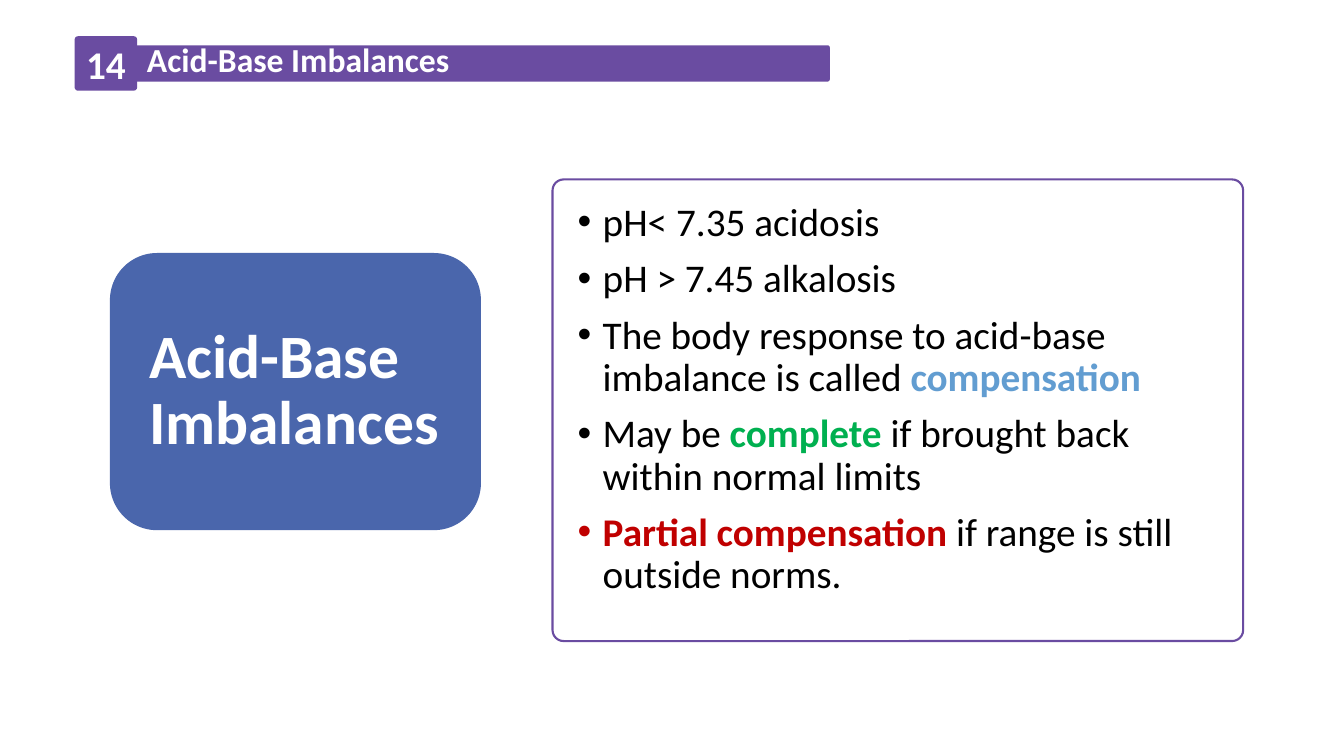
"""Builds a slide on acid-base imbalances."""
from lxml import etree
from pptx import Presentation
from pptx.dml.color import RGBColor
from pptx.enum.shapes import MSO_SHAPE
from pptx.enum.text import MSO_ANCHOR, PP_ALIGN
from pptx.oxml.ns import qn
from pptx.util import Inches, Pt

ROUNDED = MSO_SHAPE.ROUNDED_RECTANGLE
TOP, MIDDLE = MSO_ANCHOR.TOP, MSO_ANCHOR.MIDDLE
LEFT, CENTER = PP_ALIGN.LEFT, PP_ALIGN.CENTER

PURPLE, BLUE, WHITE, BLACK = "6A4CA1", "4A66AC", "FFFFFF", "000000"
SKY, GREEN, RED = "629DD1", "00B050", "C00000"
TOPIC = "Acid-Base Imbalances"
POINTS = [
    [("pH< 7.35 acidosis", None)],
    [("pH > 7.45 alkalosis", None)],
    [("The body response to acid-base imbalance is called ", None), ("compensation", SKY)],
    [("May be ", None), ("complete ", GREEN), ("if brought back within normal limits", None)],
    [("Partial compensation ", RED), ("if range is still outside norms.", None)],
]


def color(value):
    return RGBColor.from_string(value)


class SlideBuilder:
    def __init__(self, page, font="Calibri"):
        self.page = page
        self.font = font

    def panel(self, left, top, width, height, fill, line=None, corner=0.06):
        shape = self.page.shapes.add_shape(
            ROUNDED, Inches(left), Inches(top), Inches(width), Inches(height))
        shape.shadow.inherit = False
        shape.adjustments[0] = corner
        shape.fill.solid()
        shape.fill.fore_color.rgb = color(fill)
        if line:
            shape.line.color.rgb = color(line)
            shape.line.width = Pt(1.5)
        else:
            shape.line.fill.background()
        return shape

    def text_box(self, left, top, width, height):
        return self.page.shapes.add_textbox(
            Inches(left), Inches(top), Inches(width), Inches(height))

    def span(self, para, text, size, ink, bold):
        span = para.add_run()
        span.text = text
        span.font.name = self.font
        span.font.size = Pt(size)
        span.font.bold = bold
        span.font.color.rgb = color(ink)

    def label(self, box, text, size, align=LEFT, anchor=TOP, spacing=None):
        frame = box.text_frame
        frame.word_wrap = True
        frame.vertical_anchor = anchor
        para = frame.paragraphs[0]
        para.alignment = align
        para.line_spacing = spacing
        self.span(para, text, size, WHITE, True)

    def bullets(self, box, points, size):
        frame = box.text_frame
        frame.word_wrap = True
        for index, spans in enumerate(points):
            para = frame.add_paragraph() if index else frame.paragraphs[0]
            para.line_spacing = 0.9
            if index:
                para.space_before = Pt(10)
            properties = para._p.get_or_add_pPr()
            properties.set("marL", str(Inches(0.25)))
            properties.set("indent", str(-Inches(0.25)))
            etree.SubElement(properties, qn("a:buFont")).set("typeface", "Arial")
            etree.SubElement(properties, qn("a:buChar")).set("char", "•")
            for text, accent in spans:
                self.span(para, text, size, accent or BLACK, bool(accent))


def main():
    deck = Presentation()
    deck.slide_width, deck.slide_height = Inches(13.33), Inches(7.5)
    builder = SlideBuilder(deck.slides.add_slide(deck.slide_layouts[6]))

    builder.panel(5.48, 1.78, 6.85, 4.58, WHITE, line=PURPLE, corner=0.024)
    builder.bullets(builder.text_box(5.63, 1.96, 6.7, 4.12), POINTS, 28)

    builder.panel(1.09, 0.45, 7.14, 0.36, PURPLE)
    number = builder.panel(0.74, 0.36, 0.62, 0.54, PURPLE)
    builder.label(number, "14", 28, align=CENTER, anchor=MIDDLE)
    heading = builder.text_box(1.36, 0.53, 5.97, 0.35)
    builder.label(heading, TOPIC, 24, spacing=Pt(15.2))

    builder.panel(1.09, 2.51, 3.68, 2.75, BLUE, corner=0.17)
    title = builder.text_box(1.38, 3.16, 3.1, 1.45)
    builder.label(title, TOPIC, 44, anchor=MIDDLE, spacing=0.9)

    deck.save("out.pptx")


if __name__ == "__main__":
    main()
